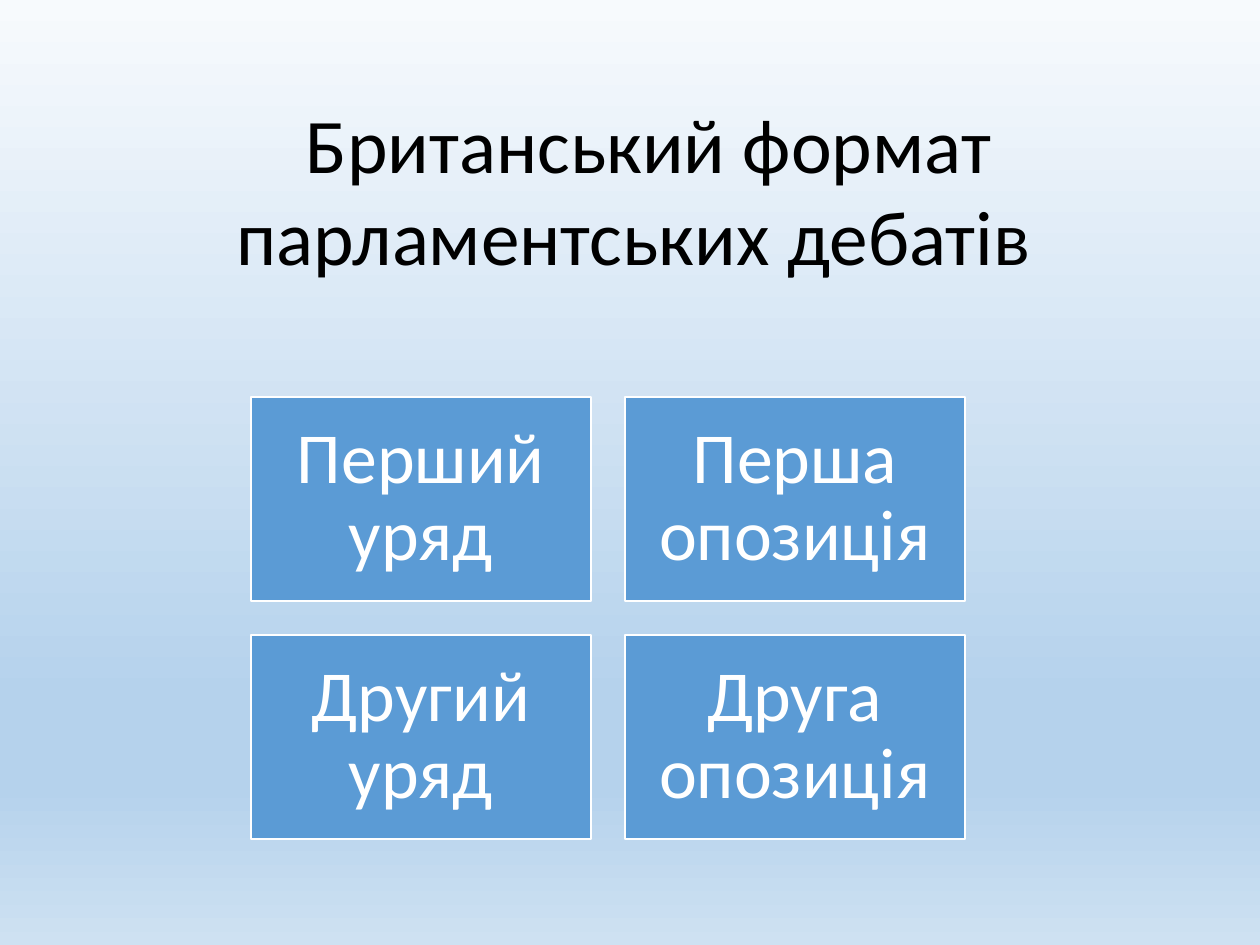
from dataclasses import dataclass

from lxml import etree
from pptx import Presentation
from pptx import util as u
from pptx.dml.color import RGBColor
from pptx.enum import shapes, text
from pptx.oxml import ns


@dataclass(frozen=True)
class Theme:
    font: str = "Calibri"
    ink: str = "000000"
    paper: str = "FFFFFF"
    tile: str = "5B9BD5"
    sky: tuple = ((0, "F7FAFD"), (74, "B5D2EC"), (83, "B5D2EC"), (100, "CEE1F2"))
    head: float = 44.1
    body: float = 41


THEME = Theme()
SCALE = u.Inches(1) // 126


def px(n):
    return u.Emu(n * SCALE)


def rgb(code):
    return RGBColor.from_string(code)


def write(shape, words, size, color, pad=(0, 0, 0, 0), lead=1.0, indent=0):
    frame = shape.text_frame
    frame.word_wrap = True
    frame.vertical_anchor = text.MSO_ANCHOR.MIDDLE
    frame.margin_left, frame.margin_top, frame.margin_right, frame.margin_bottom = map(px, pad)
    para = frame.paragraphs[0]
    para.text = words
    para.alignment = text.PP_ALIGN.CENTER
    para.line_spacing = lead
    if indent:
        para._p.get_or_add_pPr().set("indent", str(px(indent)))
    for run in para.runs:
        run.font.name = THEME.font
        run.font.size = u.Pt(size)
        run.font.color.rgb = rgb(color)


def paint(slide):
    fill = slide.background.fill
    fill.gradient()
    fill.gradient_angle = 270
    stops = next(slide.element.iter(ns.qn("a:gsLst")))
    for stop in list(stops):
        stops.remove(stop)
    for place, color in THEME.sky:
        stop = etree.SubElement(stops, ns.qn("a:gs"), pos=str(place * 1000))
        etree.SubElement(stop, ns.qn("a:srgbClr"), val=color)


def title(slide, box, words):
    shape = slide.shapes.add_textbox(*map(px, box))
    write(shape, words, THEME.head, THEME.ink, pad=(0, 0, 0, 74), indent=30)


def tile(slide, box, words):
    shape = slide.shapes.add_shape(shapes.MSO_SHAPE.RECTANGLE, *map(px, box))
    shape.shadow.inherit = False
    shape.fill.solid()
    shape.fill.fore_color.rgb = rgb(THEME.tile)
    shape.line.color.rgb = rgb(THEME.paper)
    shape.line.width = u.Pt(1)
    write(shape, words, THEME.body, THEME.paper, pad=(21, 21, 21, 21), lead=0.9)


def grid(slide, box, rows, gap):
    left, top, width, height = box
    wide = (width - gap * (len(rows[0]) - 1)) // len(rows[0])
    high = (height - gap * (len(rows) - 1)) // len(rows)
    for r, row in enumerate(rows):
        for c, words in enumerate(row):
            spot = (left + c * (wide + gap), top + r * (high + gap), wide, high)
            tile(slide, spot, words)


def main():
    deck = Presentation()
    deck.slide_width, deck.slide_height = px(1260), px(945)
    slide = deck.slides.add_slide(deck.slide_layouts[6])
    paint(slide)
    title(slide, (60, 134, 1148, 183), "Британський формат\vпарламентських дебатів")
    teams = (("Перший уряд", "Перша опозиція"), ("Другий уряд", "Друга опозиція"))
    grid(slide, (251, 397, 714, 442), teams, gap=34)
    deck.save("out.pptx")


if __name__ == "__main__":
    main()
